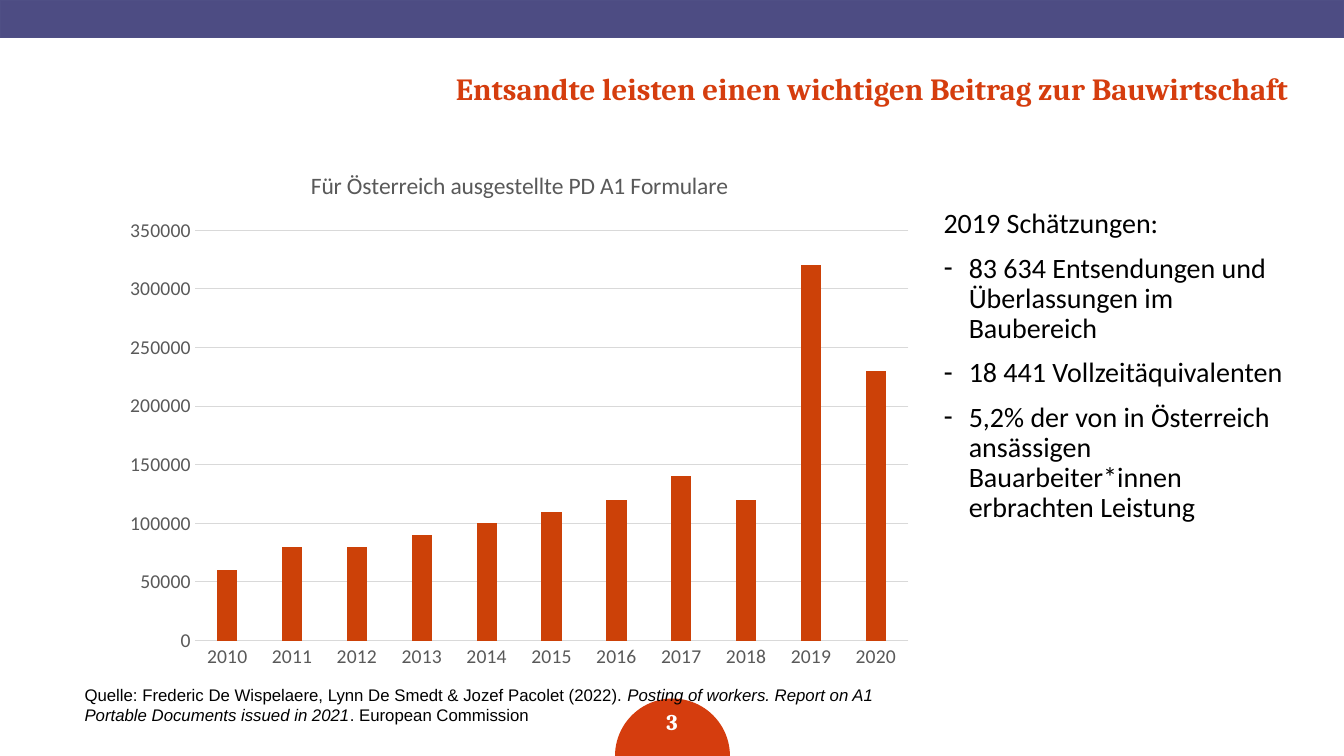
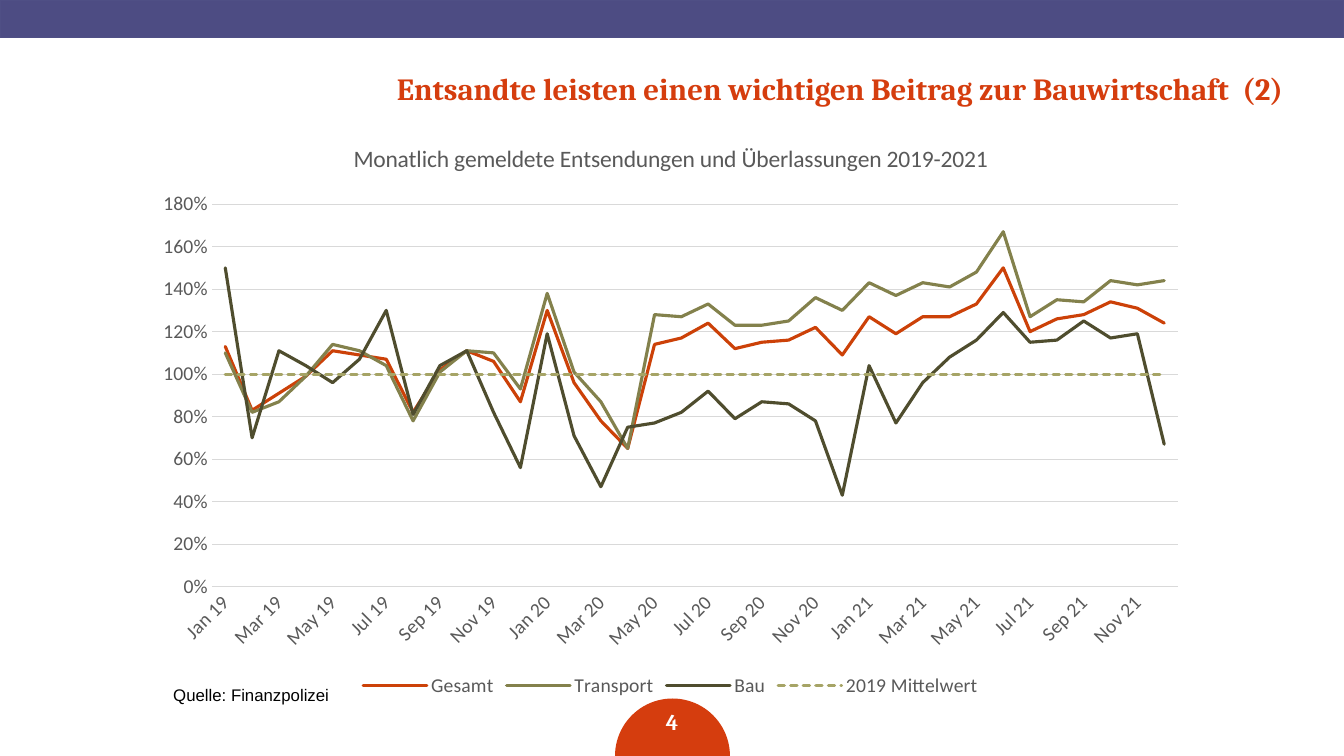
from dataclasses import dataclass

import pptx
import pptx.chart.data
import pptx.dml.color
import pptx.enum.chart
import pptx.enum.dml
import pptx.enum.shapes
import pptx.enum.text
import pptx.oxml
import pptx.oxml.ns
import pptx.util
from pptx.util import Inches, Pt

ALIGN = pptx.enum.text.PP_ALIGN
ANCHOR = pptx.enum.text.MSO_ANCHOR
SHAPE = pptx.enum.shapes.MSO_SHAPE
CHART = pptx.enum.chart.XL_CHART_TYPE
qn = pptx.oxml.ns.qn


def rgb(value):
    return pptx.dml.color.RGBColor.from_string(value)


def set_all(obj, values):
    for name, value in values.items():
        setattr(obj, name, value)


def set_font(font, color, **values):
    set_all(font, values)
    font.color.rgb = rgb(color)


def sub(parent, tag, **attrs):
    """Append a child element with the given attributes."""
    child = pptx.oxml.parse_xml(f"<{tag} {pptx.oxml.ns.nsdecls(tag.split(':')[0])}/>")
    for name, value in attrs.items():
        child.set(name, str(value))
    parent.append(child)


@dataclass(frozen=True)
class Theme:
    band: str = "4D4C83"
    band_line: str = "4F4F85"
    accent: str = "D53D0E"
    white: str = "FFFFFF"
    text: str = "000000"
    axis: str = "595959"
    grid: str = "D9D9D9"
    series: tuple = ("CC4108", "83814C", "4F4D2E", "A6A466")
    heading_font: str = "Cambria"
    body_font: str = "Calibri"
    source_font: str = "Arial"
    title_size: float = 22
    body_size: float = 20
    number_size: float = 16
    chart_title_size: float = 16.8
    chart_size: float = 14
    source_size: float = 12


class Deck:
    def __init__(self, theme):
        self.theme = theme
        self.prs = pptx.Presentation()
        set_all(self.prs, {"slide_width": Inches(13.33), "slide_height": Inches(7.5)})
        self.s = None

    def new_slide(self, title, number, title_left):
        t = self.theme
        self.s = self.prs.slides.add_slide(self.prs.slide_layouts[6])
        self.shape(SHAPE.RECTANGLE, (0, 0, 13.33, 0.37), t.band, t.band_line)
        self.shape(SHAPE.OVAL, (6.1, 6.93, 1.14, 1.14), t.accent)
        heading = {"name": t.heading_font, "bold": True}
        p = self.text_box((title_left, 0.76, 11.25, 0.35)).paragraphs[0]
        set_all(p, {"alignment": ALIGN.RIGHT, "line_spacing": Pt(18)})
        self.run(p, title, t.accent, size=Pt(t.title_size), **heading)
        tf = self.text_box((6.24, 6.96, 0.85, 0.4))
        tf.vertical_anchor = ANCHOR.MIDDLE
        p = tf.paragraphs[0]
        p.alignment = ALIGN.CENTER
        self.run(p, str(number), t.white, size=Pt(t.number_size), **heading)

    def shape(self, kind, box, fill, line=None):
        sp = self.s.shapes.add_shape(kind, *map(Inches, box))
        sp.shadow.inherit = False
        sp.fill.solid()
        sp.fill.fore_color.rgb = rgb(fill)
        if line:
            sp.line.color.rgb = rgb(line)
            sp.line.width = Pt(1)
        else:
            sp.line.fill.background()

    def text_box(self, box):
        tf = self.s.shapes.add_textbox(*map(Inches, box)).text_frame
        tf.word_wrap = True
        return tf

    def run(self, p, text, color, **font):
        r = p.add_run()
        r.text = text
        set_font(r.font, color, **font)

    def bullets(self, box, lead, items):
        """Write a lead line followed by dashed items."""
        t = self.theme
        tf = self.text_box(box)
        for i, text in enumerate([lead, *items]):
            p = tf.paragraphs[0]
            if i:
                p = tf.add_paragraph()
                p.space_before = Pt(10)
            p.line_spacing = 0.9
            if i:
                pPr = p._p.get_or_add_pPr()
                pPr.set("marL", str(Inches(0.25)))
                pPr.set("indent", str(Inches(-0.25)))
                sub(pPr, "a:buFont", typeface=t.source_font)
                sub(pPr, "a:buChar", char="-")
            self.run(p, text, t.text, name=t.body_font, size=Pt(t.body_size))

    def source(self, box, parts):
        """Write the source line; parts are (text, italic) pairs."""
        t = self.theme
        p = self.text_box(box).paragraphs[0]
        for text, italic in parts:
            self.run(p, text, t.text, name=t.source_font, size=Pt(t.source_size), italic=italic)

    def chart(self, kind, box, title, cats, series, top, step, fmt):
        t = self.theme
        data = pptx.chart.data.CategoryChartData()
        data.categories = cats
        for name, values in series.items():
            data.add_series(name, values)
        chart = self.s.shapes.add_chart(kind, *map(Inches, box), data).chart
        label = {"name": t.body_font, "size": Pt(t.chart_size)}
        set_font(chart.font, t.text, **label)
        chart.has_legend = False

        chart.has_title = True
        chart.chart_title.include_in_layout = False
        p = chart.chart_title.text_frame.paragraphs[0]
        self.run(p, title, t.axis, name=t.body_font, size=Pt(t.chart_title_size), bold=False)

        value_axis, cat_axis = chart.value_axis, chart.category_axis
        for axis in (value_axis, cat_axis):
            axis.major_tick_mark = axis.minor_tick_mark = pptx.enum.chart.XL_TICK_MARK.NONE
            set_font(axis.tick_labels.font, t.axis, **label)
        set_all(value_axis, {"minimum_scale": 0, "maximum_scale": top, "major_unit": step,
                             "has_major_gridlines": True})
        set_all(value_axis.tick_labels, {"number_format": fmt, "number_format_is_linked": False})
        value_axis.format.line.fill.background()
        for line in (value_axis.major_gridlines.format.line, cat_axis.format.line):
            line.color.rgb = rgb(t.grid)
            line.width = Pt(0.75)
        return chart

    def column_chart(self, **parts):
        chart = self.chart(CHART.COLUMN_CLUSTERED, **parts)
        plot = chart.plots[0]
        set_all(plot, {"gap_width": 219, "overlap": -27, "vary_by_categories": False})
        fill = plot.series[0].format.fill
        fill.solid()
        fill.fore_color.rgb = rgb(self.theme.series[0])

    def line_chart(self, dashed, **parts):
        t = self.theme
        chart = self.chart(CHART.LINE, **parts)
        plot = chart.plots[0]
        plot.vary_by_categories = False
        for series, color in zip(plot.series, t.series):
            series.smooth = False
            line = series.format.line
            line.color.rgb = rgb(color)
            line.width = Pt(2.25)
            if series.name == dashed:
                line.dash_style = pptx.enum.dml.MSO_LINE.SQUARE_DOT
            series._element.spPr.find(qn("a:ln")).set("cap", "rnd")
        chart.category_axis._element.txPr.find(qn("a:bodyPr")).set("rot", str(-45 * 60000))
        chart.has_legend = True
        set_all(chart.legend, {"position": pptx.enum.chart.XL_LEGEND_POSITION.BOTTOM,
                               "include_in_layout": False})
        set_font(chart.legend.font, t.axis, name=t.body_font, size=Pt(t.chart_size))


FORMS = [60000, 80000, 80000, 90000, 100000, 110000, 120000, 140000, 120000, 320000, 230000]
MONTHS = [f"{month} {year}" for year in (19, 20, 21)
          for month in "Jan Feb Mar Apr May Jun Jul Aug Sep Oct Nov Dec".split()]
POSTINGS = {
    "Gesamt": [
        1.13, 0.83, 0.91, 0.99, 1.11, 1.09, 1.07, 0.82, 1.02, 1.11, 1.06, 0.87,
        1.3, 0.96, 0.78, 0.65, 1.14, 1.17, 1.24, 1.12, 1.15, 1.16, 1.22, 1.09,
        1.27, 1.19, 1.27, 1.27, 1.33, 1.5, 1.2, 1.26, 1.28, 1.34, 1.31, 1.24],
    "Transport": [
        1.1, 0.82, 0.87, 0.99, 1.14, 1.11, 1.04, 0.78, 1.01, 1.11, 1.1, 0.93,
        1.38, 1.01, 0.87, 0.65, 1.28, 1.27, 1.33, 1.23, 1.23, 1.25, 1.36, 1.3,
        1.43, 1.37, 1.43, 1.41, 1.48, 1.67, 1.27, 1.35, 1.34, 1.44, 1.42, 1.44],
    "Bau": [
        1.5, 0.7, 1.11, 1.04, 0.96, 1.07, 1.3, 0.81, 1.04, 1.11, 0.82, 0.56,
        1.19, 0.71, 0.47, 0.75, 0.77, 0.82, 0.92, 0.79, 0.87, 0.86, 0.78, 0.43,
        1.04, 0.77, 0.96, 1.08, 1.16, 1.29, 1.15, 1.16, 1.25, 1.17, 1.19, 0.67],
    "2019 Mittelwert": [1] * len(MONTHS),
}
TITLE = "Entsandte leisten einen wichtigen Beitrag zur Bauwirtschaft"


def forms_slide(deck):
    deck.new_slide(TITLE, 3, 1.62)
    deck.bullets((9.26, 2.03, 3.61, 4.71), "2019 Schätzungen:", [
        "83 634 Entsendungen und Überlassungen im Baubereich",
        "18 441 Vollzeitäquivalenten",
        "5,2% der von in Österreich ansässigen Bauarbeiter*innen erbrachten Leistung",
    ])
    deck.column_chart(
        box=(1.13, 1.48, 8.04, 5.26),
        title="Für Österreich ausgestellte PD A1 Formulare",
        cats=[str(year) for year in range(2010, 2021)], series={"Series 1": FORMS},
        top=350000, step=50000, fmt="0")
    deck.source((0.74, 6.74, 8.43, 0.5), [
        ("Quelle: Frederic De Wispelaere, Lynn De Smedt & Jozef Pacolet (2022). ", False),
        ("Posting of workers. Report on A1 Portable Documents issued in 2021", True),
        (". European Commission", False),
    ])


def postings_slide(deck):
    deck.new_slide(TITLE + "  (2) ", 4, 1.64)
    deck.line_chart(
        dashed="2019 Mittelwert", box=(1.41, 1.2, 10.48, 5.76),
        title="Monatlich gemeldete Entsendungen und Überlassungen 2019-2021",
        cats=MONTHS, series=POSTINGS, top=1.8, step=0.2, fmt="0%")
    deck.source((1.62, 6.74, 8.43, 0.3), [("Quelle: Finanzpolizei", False)])


def main():
    deck = Deck(Theme())
    forms_slide(deck)
    postings_slide(deck)
    deck.prs.save("out.pptx")


if __name__ == "__main__":
    main()
